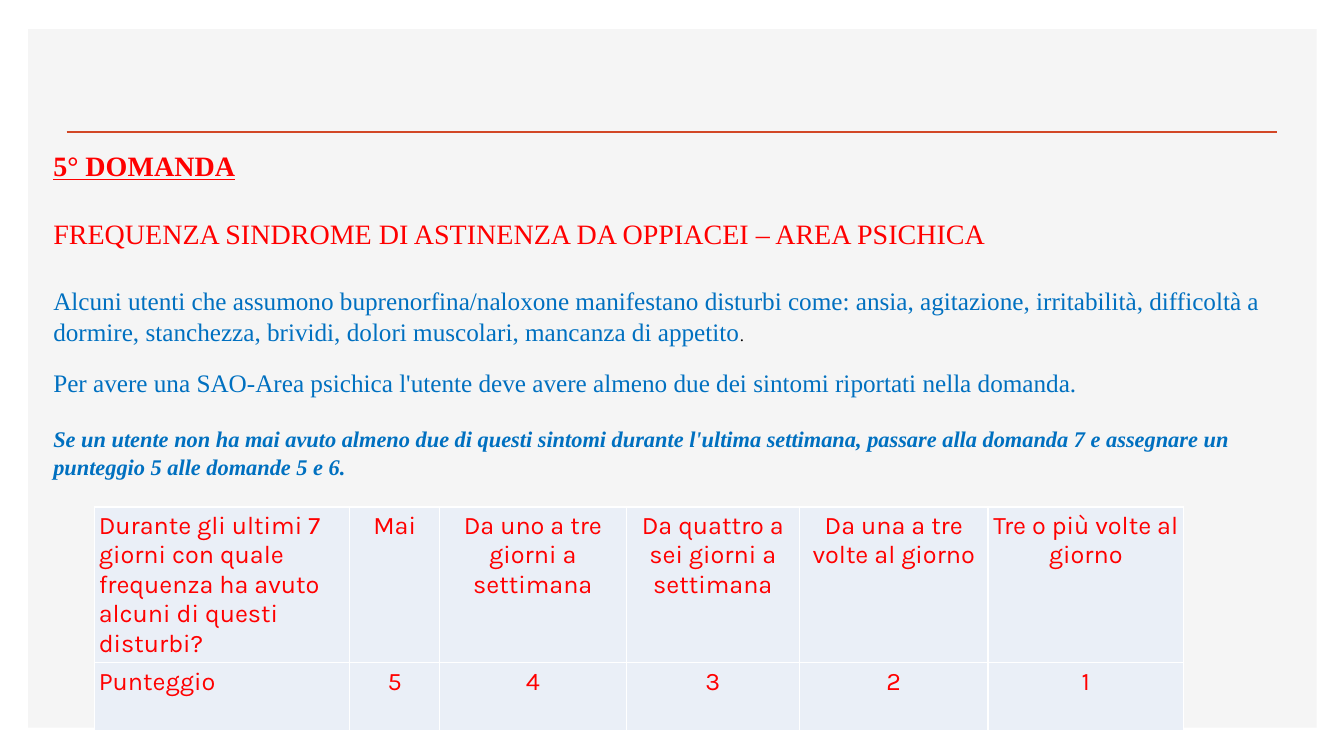
from pptx import Presentation
from pptx.dml.color import RGBColor
from pptx.enum.shapes import MSO_CONNECTOR, MSO_SHAPE
from pptx.enum.text import MSO_ANCHOR, PP_ALIGN
from pptx.oxml import parse_xml
from pptx.oxml.ns import nsdecls
from pptx.util import Inches, Pt

STRAIGHT, RECT = MSO_CONNECTOR.STRAIGHT, MSO_SHAPE.RECTANGLE
TOP, LEFT, CENTER = MSO_ANCHOR.TOP, PP_ALIGN.LEFT, PP_ALIGN.CENTER

THEME = {
    "panel": RGBColor(0xF5, 0xF5, 0xF5), "rule": RGBColor(0xD2, 0x47, 0x26),
    "cell": RGBColor(0xEA, 0xEF, 0xF7), "border": "FFFFFF",
    "red": RGBColor(0xFF, 0, 0), "blue": RGBColor(0, 0x70, 0xC0), "black": RGBColor(0, 0, 0),
    "body_font": "Times New Roman", "table_font": "Karla",
    "heading": 20, "body": 18, "note": 16, "stop": 12,
}


def style(r, font, size, color):
    r.font.name, r.font.size = font, Pt(size)
    r.font.color.rgb = color


prs = Presentation()
prs.slide_width, prs.slide_height = Inches(13.33), Inches(7.5)
s = prs.slides.add_slide(prs.slide_layouts[6])

# Background panel
panel = s.shapes.add_shape(RECT, Inches(0.28), Inches(0.29), Inches(12.78), Inches(6.93))
panel.shadow.inherit = False
panel.fill.solid()
panel.fill.fore_color.rgb = THEME["panel"]
panel.line.fill.background()

# Title rule
rule = s.shapes.add_connector(STRAIGHT, Inches(0.66), Inches(1.31), Inches(12.67), Inches(1.31))
rule.line.color.rgb = THEME["rule"]
rule.line.width = Pt(2)
rule._element.spPr.append(parse_xml(f"<a:effectLst {nsdecls('a')}/>"))

# Frequency and score table
col_widths = [2.53, 0.89, 1.85, 1.72, 1.87, 1.94]
row_heights = [1.54, 0.67]
rows = [
    ["Durante gli ultimi 7 giorni con quale frequenza ha avuto alcuni di questi disturbi?",
     "Mai", "Da uno a tre giorni a settimana", "Da quattro a sei giorni a settimana",
     "Da una a tre volte al giorno", "Tre o più volte al giorno"],
    ["Punteggio", "5", "4", "3", "2", "1"],
]
table = s.shapes.add_table(len(rows), len(col_widths), Inches(0.94), Inches(5.03),
                           Inches(sum(col_widths)), Inches(sum(row_heights))).table
for col, width in zip(table.columns, col_widths):
    col.width = Inches(width)
for i, (height, texts) in enumerate(zip(row_heights, rows)):
    table.rows[i].height = Inches(height)
    for j, text in enumerate(texts):
        cell = table.cell(i, j)
        cell.margin_left = cell.margin_right = Inches(0.04)
        cell.margin_top = cell.margin_bottom = Inches(0.04)
        p = cell.text_frame.paragraphs[0]
        p.text = text
        p.alignment = CENTER if j else LEFT
        style(p.runs[0], THEME["table_font"], THEME["body"], THEME["red"])
        p.runs[0].font.bold = False
        for n, side in enumerate(("lnL", "lnR", "lnT", "lnB")):
            cell._tc.get_or_add_tcPr().insert(n, parse_xml(
                f'<a:{side} {nsdecls("a")} w="12700"><a:solidFill>'
                f'<a:srgbClr val="{THEME["border"]}"/></a:solidFill></a:{side}>'))
        cell.fill.solid()
        cell.fill.fore_color.rgb = THEME["cell"]

# Question text: wording, size, colour, space before in points
paragraphs = [
    ("5° DOMANDA", "heading", "red", 0),
    ("FREQUENZA SINDROME DI ASTINENZA DA OPPIACEI – AREA PSICHICA", "heading", "red", 24),
    ("Alcuni utenti che assumono buprenorfina/naloxone manifestano disturbi come: ansia, "
     "agitazione, irritabilità, difficoltà a dormire, stanchezza, brividi, dolori muscolari, "
     "mancanza di appetito", "body", "blue", 24),
    ("Per avere una SAO-Area psichica l'utente deve avere almeno due dei sintomi riportati "
     "nella domanda.", "body", "blue", 13.5),
    ("Se un utente non ha mai avuto almeno due di questi sintomi durante l'ultima settimana, "
     "passare alla domanda 7 e assegnare un punteggio 5 alle domande 5 e 6.",
     "note", "blue", 19),
]
tf = s.shapes.add_textbox(Inches(0.43), Inches(1.41), Inches(12.58), Inches(3.33)).text_frame
tf.word_wrap = True
tf.vertical_anchor = TOP
for i, (text, size, color, before) in enumerate(paragraphs):
    p = tf.add_paragraph() if i else tf.paragraphs[0]
    p.text = text
    p.line_spacing = 1.04
    p.space_before = Pt(before)
    style(p.runs[0], THEME["body_font"], THEME[size], THEME[color])

# Emphasis and the small full stop
question, _, symptoms, _, note = tf.paragraphs
question.runs[0].font.bold = question.runs[0].font.underline = True
note.runs[0].font.bold = note.runs[0].font.italic = True
r = symptoms.add_run()
r.text = "."
style(r, THEME["body_font"], THEME["stop"], THEME["black"])

prs.save("out.pptx")
